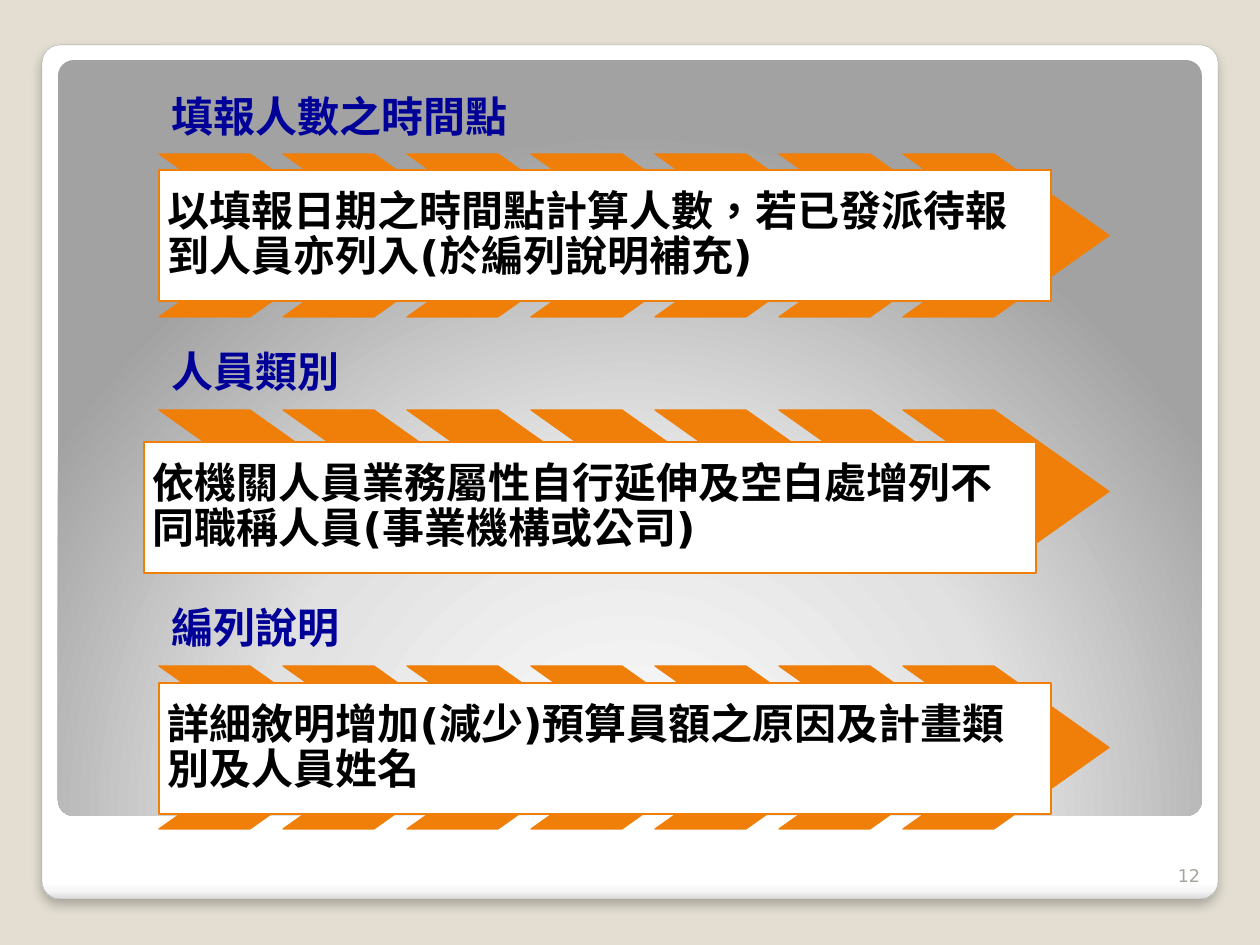
"""Build a slide of three headed message boxes laid over rows of chevrons."""
from pptx import Presentation
from pptx.dml.color import RGBColor
from pptx.enum.shapes import MSO_SHAPE
from pptx.enum.text import MSO_ANCHOR, PP_ALIGN
from pptx.oxml import parse_xml
from pptx.oxml.ns import nsdecls, qn
from pptx.util import Emu, Pt

RECT, ROUND, CHEVRON = MSO_SHAPE.RECTANGLE, MSO_SHAPE.ROUNDED_RECTANGLE, MSO_SHAPE.CHEVRON
TOP, MIDDLE, BOTTOM = MSO_ANCHOR.TOP, MSO_ANCHOR.MIDDLE, MSO_ANCHOR.BOTTOM
LEFT, RIGHT = PP_ALIGN.LEFT, PP_ALIGN.RIGHT

SCALE = 914400 / 126
FONT = "DejaVu Sans"
COLORS = {
    "page": "E3DED1", "white": "FFFFFF", "edge": "A4A4A4", "orange": "F07F09",
    "heading": "000099", "body": "000000", "number": "A8A49B",
}
CARD_STOPS = [(0, "FFFFFF"), (98, "FFFFFF"), (99, "F7F7F7"), (100, "DADADA")]
PANEL_STOPS = [(0, "FFFFFF"), (55, "E1E1E1"), (100, "A2A2A2")]
CARD_DIRECTION = '<a:lin ang="5400000" scaled="0"/>'
PANEL_DIRECTION = ('<a:path path="circle"><a:fillToRect l="50000" t="175000" '
                   'r="50000" b="-75000"/></a:path>')
CARD_SHADOW = (f'<a:outerShdw {nsdecls("a")} blurRad="76200" dist="50800" dir="5400000" '
               'rotWithShape="0"><a:srgbClr val="000000"><a:alpha val="25000"/>'
               '</a:srgbClr></a:outerShdw>')

ROW_LEFT, ROW_TOP, ROW_PITCH = 159, 154, 256
CHEVRON_COUNT, CHEVRON_STEP = 7, 124
SECTIONS = [
    ("填報人數之時間點", "以填報日期之時間點計算人數，若已發派待報到人員亦列入(於編列說明補充)", 0, 16),
    ("人員類別", "依機關人員業務屬性自行延伸及空白處增列不同職稱人員(事業機構或公司)", -15, 32),
    ("編列說明", "詳細敘明增加(減少)預算員額之原因及計畫類別及人員姓名", 0, 17),
]


def px(n):
    """Turn pixels into EMU."""
    return Emu(round(n * SCALE))


def rgb(name):
    """Look up a named colour."""
    return RGBColor.from_string(COLORS[name])


def add_shape(slide, kind, box, fill=None, line=None, width=0.75, adj=None):
    """Add a preset shape without shadow."""
    sp = slide.shapes.add_shape(kind, *map(px, box))
    sp.shadow.inherit = False
    if adj is not None:
        sp.adjustments[0] = adj
    if fill:
        sp.fill.solid()
        sp.fill.fore_color.rgb = rgb(fill)
    if line:
        sp.line.color.rgb = rgb(line)
        sp.line.width = Pt(width)
    else:
        sp.line.fill.background()
    return sp


def set_gradient(sp, stops, direction):
    """Fill a shape with a gradient."""
    gs = "".join(f'<a:gs pos="{pos * 1000}"><a:srgbClr val="{color}"/></a:gs>'
                 for pos, color in stops)
    xml = (f'<a:gradFill {nsdecls("a")} rotWithShape="1"><a:gsLst>{gs}</a:gsLst>'
           f'{direction}</a:gradFill>')
    sp._element.spPr.find(qn("a:prstGeom")).addnext(parse_xml(xml))


def set_text(sp, text, color, size=24, bold=True, anchor=MIDDLE, align=LEFT,
             inset=(9, 9, 9, 9), spacing=0.9):
    """Write one formatted paragraph into a shape."""
    tf = sp.text_frame
    left, top, right, bottom = map(px, inset)
    frame = {"word_wrap": True, "vertical_anchor": anchor, "margin_left": left,
             "margin_top": top, "margin_right": right, "margin_bottom": bottom}
    p = tf.paragraphs[0]
    r = p.add_run()
    r.text = text
    r._r.get_or_add_rPr().set("lang", "zh-TW")
    for target, values in (
        (tf, frame),
        (p, {"alignment": align, "line_spacing": spacing}),
        (r.font, {"name": FONT, "size": Pt(size), "bold": bold}),
    ):
        for name, value in values.items():
            setattr(target, name, value)
    r.font.color.rgb = rgb(color)


def add_text(slide, box, text, color, **formats):
    """Add a text box."""
    set_text(slide.shapes.add_textbox(*map(px, box)), text, color, **formats)


def add_frame(slide):
    """Add the shadowed card and the panel on it."""
    card = add_shape(slide, ROUND, (42, 45, 1176, 854), line="edge", width=0.16, adj=0.021)
    set_gradient(card, CARD_STOPS, CARD_DIRECTION)
    card._element.spPr.find(qn("a:effectLst")).append(parse_xml(CARD_SHADOW))
    panel = add_shape(slide, ROUND, (58, 60, 1144, 756), adj=0.021)
    set_gradient(panel, PANEL_STOPS, PANEL_DIRECTION)


def add_section(slide, top, heading, message, dx, dy):
    """Add a heading, its row of chevrons and the message box."""
    add_text(slide, (ROW_LEFT, top - 81, 881, 81), heading, "heading",
             anchor=BOTTOM, inset=(13, 13, 13, 13))
    for i in range(CHEVRON_COUNT):
        box = (ROW_LEFT + i * CHEVRON_STEP, top, 206, 163)
        add_shape(slide, CHEVRON, box, "orange", "orange", adj=0.706)
    sp = add_shape(slide, RECT, (ROW_LEFT + dx, top + dy, 892, 131), "white", "orange")
    set_text(sp, message, "body")


def main():
    """Build and save the slide."""
    prs = Presentation()
    prs.slide_width, prs.slide_height = px(1260), px(945)
    slide = prs.slides.add_slide(prs.slide_layouts[6])
    slide.background.fill.solid()
    slide.background.fill.fore_color.rgb = rgb("page")
    add_frame(slide)
    for i, section in enumerate(SECTIONS):
        add_section(slide, ROW_TOP + i * ROW_PITCH, *section)
    add_text(slide, (1150, 842, 63, 50), "12", "number", size=10, bold=False,
             anchor=BOTTOM, align=RIGHT, inset=(13, 6, 13, 6), spacing=1.0)
    prs.save("out.pptx")


if __name__ == "__main__":
    main()
